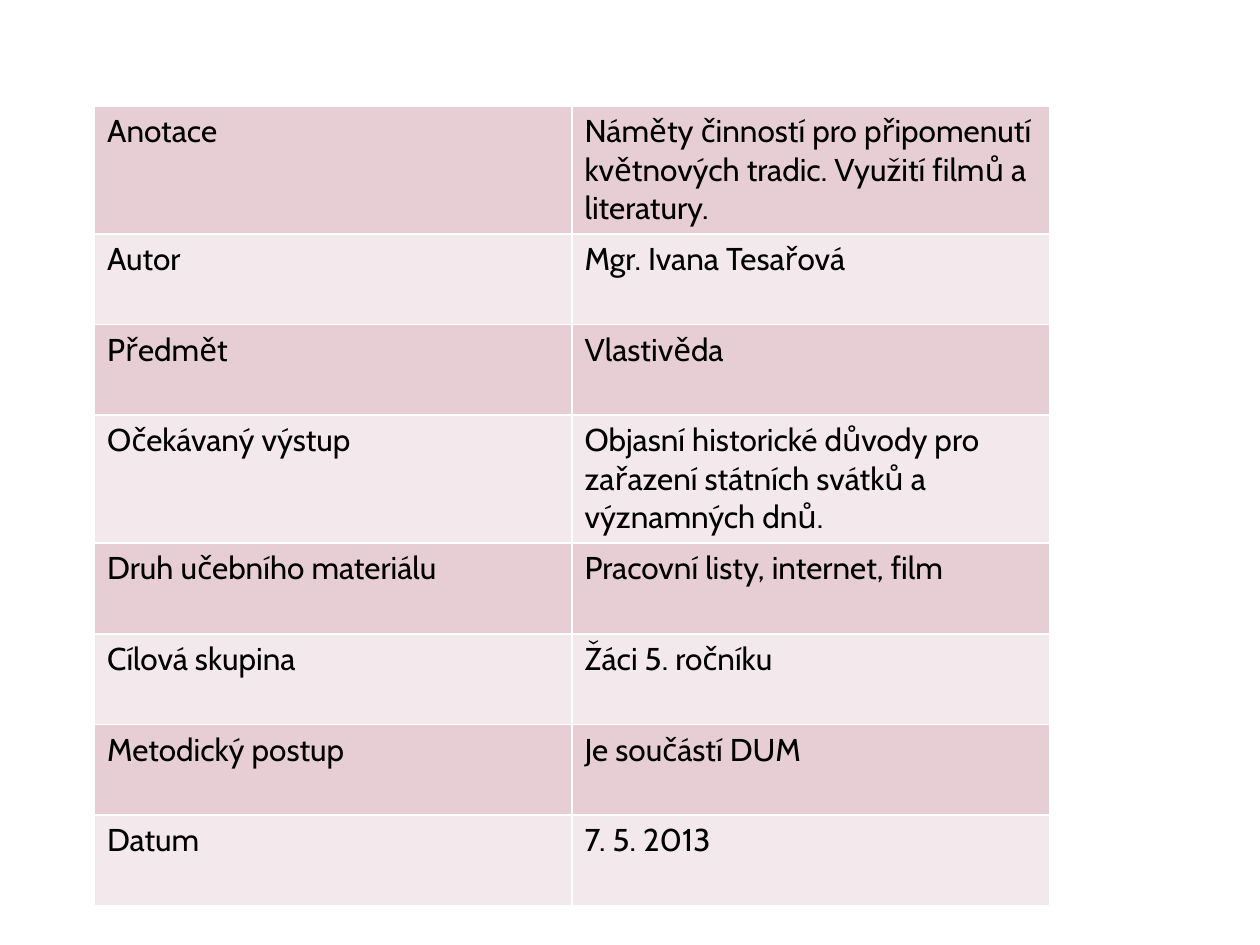
from lxml.etree import SubElement
from pptx import Presentation
from pptx.dml.color import RGBColor
from pptx.oxml.ns import qn
from pptx.util import Pt

PX = 9144
FONT = "Cabin"
BLACK = RGBColor(0x00, 0x00, 0x00)
WHITE = RGBColor(0xFF, 0xFF, 0xFF)
ROSE = RGBColor(0xE6, 0xCE, 0xD4)
PALE_ROSE = RGBColor(0xF3, 0xE8, 0xEB)

ROWS = [
    ("Anotace", "Náměty činností pro připomenutí květnových tradic. Využití filmů a literatury."),
    ("Autor", "Mgr. Ivana Tesařová"),
    ("Předmět", "Vlastivěda"),
    ("Očekávaný výstup", "Objasní historické důvody pro zařazení státních svátků a významných dnů."),
    ("Druh učebního materiálu", "Pracovní listy, internet, film"),
    ("Cílová skupina", "Žáci 5. ročníku"),
    ("Metodický postup", "Je součástí DUM"),
    ("Datum", "7. 5. 2013"),
]


def px(n):
    return int(n * PX)


def write(tf, text, size=18, color=BLACK, font=FONT):
    r = tf.paragraphs[0].add_run()
    r.text = text
    r.font.size = Pt(size)
    r.font.name = font
    r.font.bold = False
    r.font.color.rgb = color


def border(cell, color=WHITE, width=1):
    tcPr = cell._tc.get_or_add_tcPr()
    for side in ("lnL", "lnR", "lnT", "lnB"):
        ln = SubElement(tcPr, qn(f"a:{side}"), w=str(Pt(width)))
        fill = SubElement(ln, qn("a:solidFill"))
        SubElement(fill, qn("a:srgbClr"), val=str(color))


def info_table(s, x, y, w, row_h, rows):
    cols = len(rows[0])
    frame = s.shapes.add_table(len(rows), cols, px(x), px(y), px(w), px(row_h * len(rows)))
    table = frame.table
    for i, row in enumerate(rows):
        table.rows[i].height = px(row_h)
        for j, text in enumerate(row):
            cell = table.cell(i, j)
            border(cell)
            cell.fill.solid()
            cell.fill.fore_color.rgb = PALE_ROSE if i % 2 else ROSE
            write(cell.text_frame, text)


def main():
    prs = Presentation()
    prs.slide_width, prs.slide_height = px(1000), px(750)
    s = prs.slides.add_slide(prs.slide_layouts[6])
    info_table(s, 75, 84, 758, 72, ROWS)
    prs.save("out.pptx")


if __name__ == "__main__":
    main()
